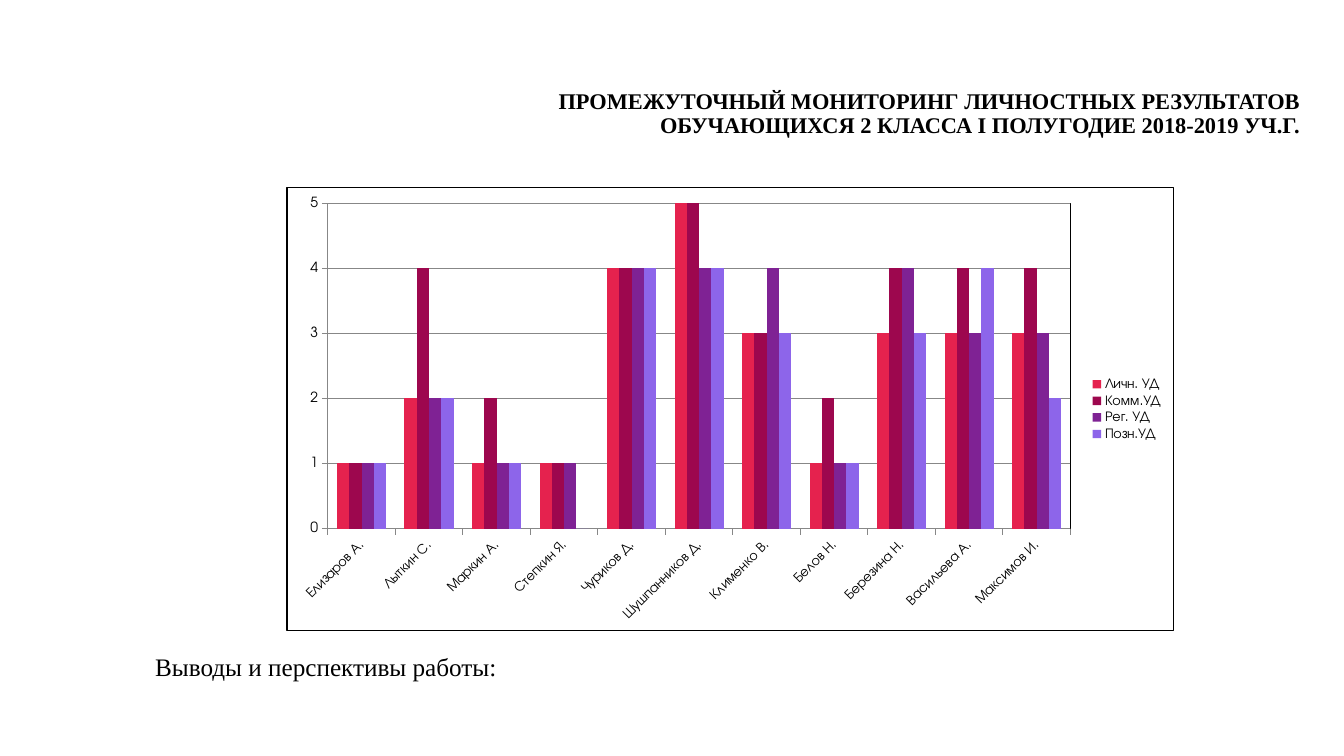
import dataclasses

import lxml.etree
import pptx
import pptx.chart.chart
import pptx.chart.data
import pptx.dml.color
import pptx.enum.chart
import pptx.enum.text
import pptx.oxml
import pptx.oxml.ns
import pptx.slide
import pptx.text.text
import pptx.util
from pptx.util import Cm

COLORS = {
    "ink": "000000",
    "grid": "878787",
    "personal": "E5224E",
    "communicative": "9D074E",
    "regulative": "7F2294",
    "cognitive": "8D65EA",
}
TEXT_FONT = "Times New Roman"
CHART_FONT = "TeX Gyre Adventor"
PUPILS = [
    "Елизаров А.", "Лыткин С.", "Маркин А.", "Степкин Я.", "Чуриков Д.",
    "Шушпанников Д.", "Клименко В.", "Белов Н.", "Березина Н.",
    "Васильева А.", "Максимов И.",
]


@dataclasses.dataclass(frozen=True)
class Skill:
    name: str
    color: str
    scores: tuple[int, ...]


SKILLS = [
    Skill("Личн. УД", "personal", (1, 2, 1, 1, 4, 5, 3, 1, 3, 3, 3)),
    Skill("Комм.УД", "communicative", (1, 4, 2, 1, 4, 5, 3, 2, 4, 4, 4)),
    Skill("Рег. УД", "regulative", (1, 2, 1, 1, 4, 4, 4, 1, 4, 3, 3)),
    Skill("Позн.УД", "cognitive", (1, 2, 1, 0, 4, 4, 3, 1, 3, 4, 2)),
]


def rgb(color: str) -> pptx.dml.color.RGBColor:
    return pptx.dml.color.RGBColor.from_string(COLORS[color])


def write_text(
    frame: pptx.text.text.TextFrame,
    text: str,
    *,
    size: float,
    bold: bool = False,
    align: pptx.enum.text.PP_ALIGN = pptx.enum.text.PP_ALIGN.LEFT,
    line_spacing: float = 1.0,
) -> None:
    paragraph = frame.paragraphs[0]
    paragraph.text = text
    paragraph.alignment = align
    paragraph.line_spacing = line_spacing
    for run in paragraph.runs:
        run.font.name = TEXT_FONT
        run.font.size = pptx.util.Pt(size)
        run.font.bold = bold
        run.font.color.rgb = rgb("ink")


def outline_xml() -> lxml.etree._Element:
    return pptx.oxml.parse_xml(
        f'<c:spPr {pptx.oxml.ns.nsdecls("c", "a")}><a:noFill/><a:ln w="9525">'
        f'<a:solidFill><a:srgbClr val="{COLORS["ink"]}"/></a:solidFill></a:ln></c:spPr>'
    )


def frame_chart(chart: pptx.chart.chart.Chart) -> None:
    chart_space = chart._chartSpace
    chart_space.xpath("c:txPr")[0].addprevious(outline_xml())
    plot_area = chart_space.xpath("c:chart/c:plotArea")[0]
    plot_area.append(outline_xml())
    for layout in plot_area.xpath("c:layout"):
        plot_area.remove(layout)
    bounds = {"x": 0.046, "y": 0.035, "w": 0.838, "h": 0.735}
    placement = "".join(f'<c:{key} val="{share}"/>' for key, share in bounds.items())
    plot_area.insert(0, pptx.oxml.parse_xml(
        f'<c:layout {pptx.oxml.ns.nsdecls("c")}><c:manualLayout>'
        '<c:layoutTarget val="inner"/><c:xMode val="edge"/><c:yMode val="edge"/>'
        f"{placement}</c:manualLayout></c:layout>"
    ))


def add_scores_chart(slide: pptx.slide.Slide) -> None:
    scores = pptx.chart.data.CategoryChartData(number_format="General")
    scores.categories = PUPILS
    for skill in SKILLS:
        scores.add_series(skill.name, skill.scores)
    chart = slide.shapes.add_chart(
        pptx.enum.chart.XL_CHART_TYPE.COLUMN_CLUSTERED,
        Cm(7.22), Cm(4.72), Cm(22.36), Cm(11.18), scores,
    ).chart
    chart.has_title = False
    chart.font.name = CHART_FONT
    chart.font.size = pptx.util.Pt(10)
    chart.font.color.rgb = rgb("ink")

    plot = chart.plots[0]
    plot.gap_width = 150
    plot.overlap = 0
    plot.vary_by_categories = False
    for series, skill in zip(plot.series, SKILLS):
        series.format.fill.solid()
        series.format.fill.fore_color.rgb = rgb(skill.color)
        series.invert_if_negative = False

    for axis in (chart.category_axis, chart.value_axis):
        axis.major_tick_mark = pptx.enum.chart.XL_TICK_MARK.OUTSIDE
        axis.format.line.color.rgb = rgb("grid")
        axis.tick_labels.font.size = pptx.util.Pt(10)
        axis.tick_labels.font.color.rgb = rgb("ink")
    pupil_labels = chart.category_axis._element.xpath("c:txPr/a:bodyPr")[0]
    pupil_labels.set("rot", "-2700000")
    pupil_labels.set("vert", "horz")

    score_axis = chart.value_axis
    score_axis.minimum_scale = 0
    score_axis.maximum_scale = 5
    score_axis.major_unit = 1
    score_axis.has_major_gridlines = True
    score_axis.major_gridlines.format.line.color.rgb = rgb("grid")

    chart.has_legend = True
    chart.legend.position = pptx.enum.chart.XL_LEGEND_POSITION.RIGHT
    chart.legend.include_in_layout = False
    chart.legend.font.size = pptx.util.Pt(10)
    chart.legend.font.color.rgb = rgb("ink")
    frame_chart(chart)


def add_heading(slide: pptx.slide.Slide) -> None:
    heading = slide.shapes.title
    heading.left, heading.top = Cm(9.09), Cm(1.4)
    heading.width, heading.height = Cm(23.93), Cm(3.58)
    frame = heading.text_frame
    frame.word_wrap = True
    frame.auto_size = pptx.enum.text.MSO_AUTO_SIZE.NONE
    frame.vertical_anchor = pptx.enum.text.MSO_ANCHOR.MIDDLE
    frame.margin_bottom = Cm(0.74)
    write_text(
        frame,
        "ПРОМЕЖУТОЧНЫЙ МОНИТОРИНГ ЛИЧНОСТНЫХ РЕЗУЛЬТАТОВ\v"
        "ОБУЧАЮЩИХСЯ 2 КЛАССА I ПОЛУГОДИЕ 2018-2019 УЧ.Г.",
        size=16, bold=True, align=pptx.enum.text.PP_ALIGN.RIGHT, line_spacing=0.9,
    )


def add_conclusions(slide: pptx.slide.Slide) -> None:
    conclusions = slide.shapes.add_textbox(Cm(3.66), Cm(16.28), Cm(9.22), Cm(1.02))
    conclusions.text_frame.word_wrap = False
    conclusions.text_frame.auto_size = pptx.enum.text.MSO_AUTO_SIZE.SHAPE_TO_FIT_TEXT
    write_text(conclusions.text_frame, "Выводы и перспективы работы:", size=18)


def main() -> None:
    presentation = pptx.Presentation()
    presentation.slide_width = Cm(33.87)
    presentation.slide_height = Cm(19.05)
    slide = presentation.slides.add_slide(presentation.slide_layouts[5])
    add_heading(slide)
    add_scores_chart(slide)
    add_conclusions(slide)
    presentation.save("out.pptx")


if __name__ == "__main__":
    main()
